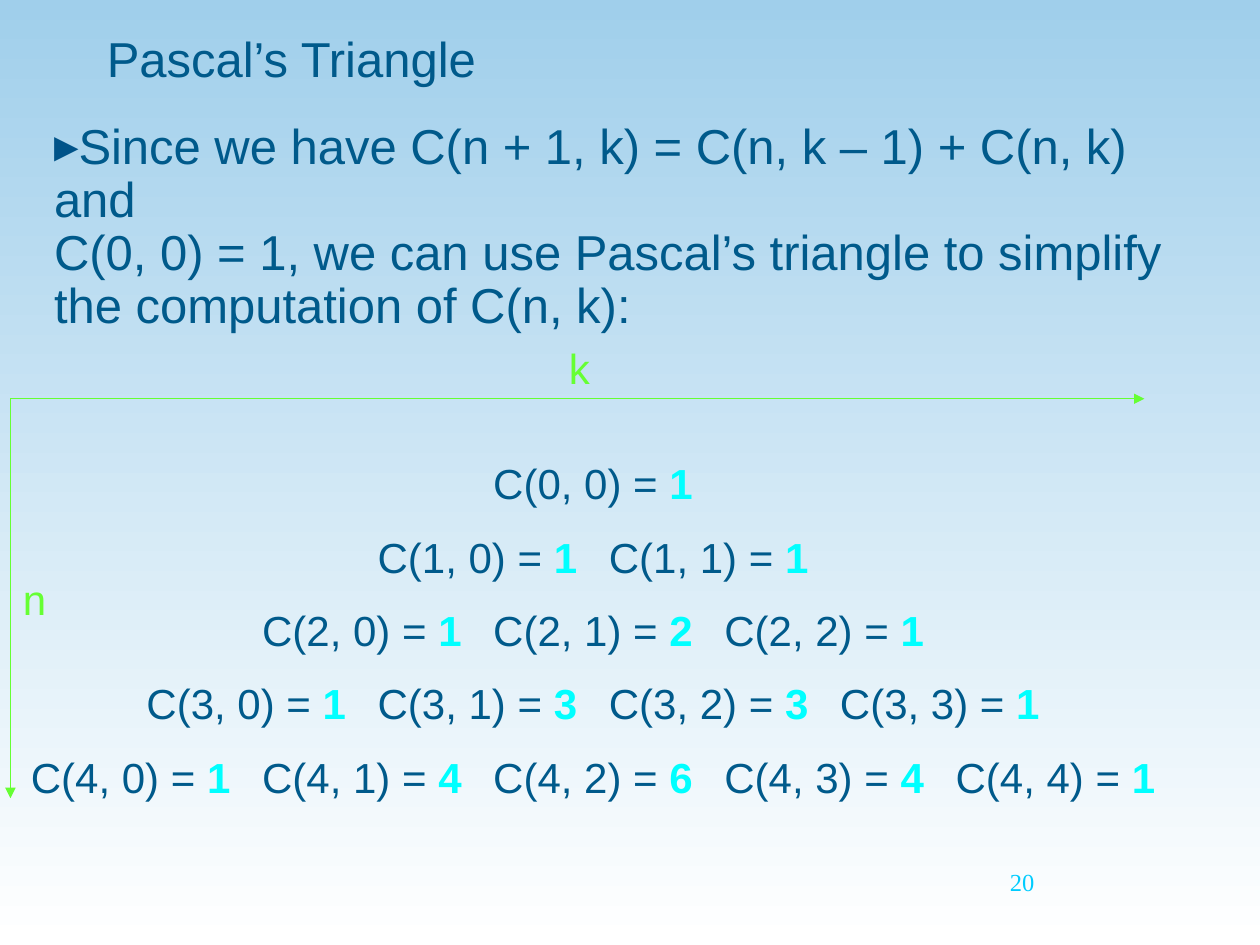
from dataclasses import dataclass
from math import comb
from lxml import etree
from pptx import Presentation
from pptx.dml.color import RGBColor as RGB
from pptx.enum.shapes import MSO_CONNECTOR as LINE
from pptx.enum.text import MSO_ANCHOR as ANCHOR, PP_ALIGN as ALIGN
from pptx.oxml.ns import qn
from pptx.util import Cm, Pt


@dataclass(frozen=True)
class Theme:
    sky: str = "A0CFEB"
    white: str = "FFFFFF"
    text: str = "005A8B"
    bullet: str = "005389"
    value: str = "00FFFF"
    axis: str = "66FF33"
    number: str = "00CCFF"
    font: str = "Arial"
    serif: str = "Times New Roman"
    large: int = 28
    medium: int = 24
    small: int = 14


theme = Theme()


def add_run(para, text, size, color, bold=False, face=theme.font):
    run = para.add_run()
    run.text = text
    run.font.size = Pt(size)
    run.font.name = face
    run.font.bold = bold
    run.font.color.rgb = RGB.from_string(color)


def add_box(left, top, width, height=1.27):
    box = slide.shapes.add_textbox(Cm(left), Cm(top), Cm(width), Cm(height))
    box.text_frame.word_wrap = True
    return box.text_frame.paragraphs[0]


deck = Presentation()
deck.slide_width, deck.slide_height = Cm(25.4), Cm(19.05)
slide = deck.slides.add_slide(deck.slide_layouts[5])

# Background
fill = slide.background.fill
fill.gradient()
fill.gradient_angle = 270
for stop, color in zip(fill.gradient_stops, (theme.sky, theme.white)):
    stop.color.rgb = RGB.from_string(color)
fill.gradient_stops[0].position = 0
fill.gradient_stops[1].position = 1

# Title
title = slide.shapes.title
title.left, title.top, title.width, title.height = Cm(1.9), Cm(0.43), Cm(21.6), Cm(1.47)
title.text_frame.vertical_anchor = ANCHOR.MIDDLE
para = title.text_frame.paragraphs[0]
para.alignment = ALIGN.LEFT
add_run(para, "Pascal’s Triangle", theme.large, theme.text)

# Introduction with its bullet
para = add_box(0.84, 2.34, 23.7, 3.81)
para.line_spacing = 0.9
props = para._p.get_or_add_pPr()
tint = etree.SubElement(props, qn("a:buClr"))
etree.SubElement(tint, qn("a:srgbClr"), val=theme.bullet)
etree.SubElement(props, qn("a:buFont"), typeface=theme.font)
etree.SubElement(props, qn("a:buChar"), char="▸")
add_run(para, "Since we have C(n + 1, k) = C(n, k – 1) + C(n, k) and", theme.large, theme.text)
para.add_line_break()
add_run(para, "C(0, 0) = 1, we can use Pascal’s triangle to simplify the computation of C(n, k):",
        theme.large, theme.text)

# Slide number
para = add_box(20.11, 17.35, 5.29)
add_run(para, "20", theme.small, theme.number, face=theme.serif)

# Triangle: each row starts half a step further left
apex, first, step, drop = 9.31, 9.1, 4.66, 1.48
for n in range(5):
    for k in range(n + 1):
        para = add_box(apex + step * (k - n / 2), first + drop * n, 5.29)
        para.alignment = ALIGN.CENTER
        add_run(para, f"C({n}, {k}) = ", theme.medium, theme.text)
        add_run(para, str(comb(n, k)), theme.medium, theme.value, bold=True)

# Axes and their labels
left, top = 0.21, 8.04
axes = (("n", left, 16.09, 0.21, 11.43), ("k", 23.07, top, 11.22, 6.77))
for name, right, bottom, x, y in axes:
    axis = slide.shapes.add_connector(LINE.STRAIGHT, Cm(left), Cm(top), Cm(right), Cm(bottom))
    axis.line.color.rgb = RGB.from_string(theme.axis)
    axis.line.width = Pt(0.75)
    etree.SubElement(axis.line._get_or_add_ln(), qn("a:tailEnd"), type="triangle")
    etree.SubElement(axis._element.spPr, qn("a:effectLst"))
    add_run(add_box(x, y, 1.9), name, theme.medium, theme.axis)

deck.save("out.pptx")
